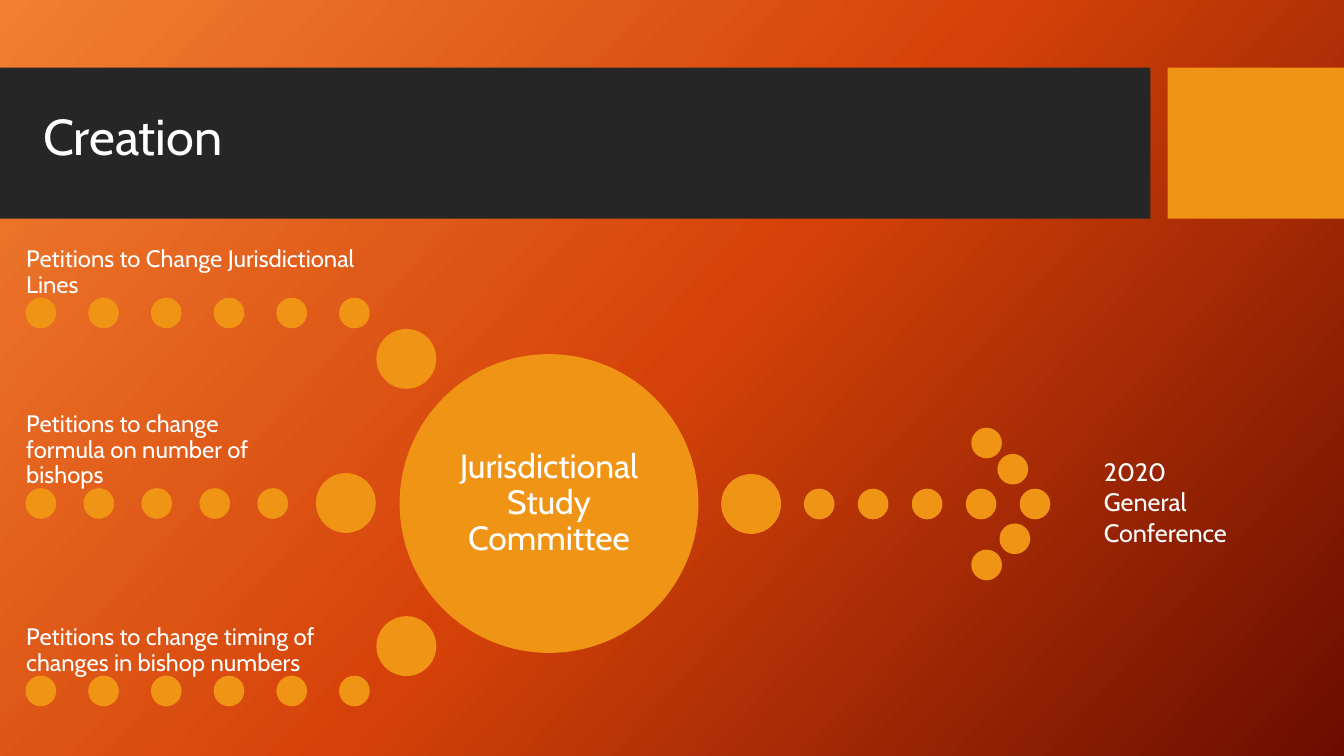
from copy import deepcopy
from pptx import Presentation
from pptx.dml.color import RGBColor
from pptx.enum.shapes import MSO_SHAPE as Preset
from pptx.enum.text import MSO_ANCHOR as Anchor, PP_ALIGN as Align
from pptx.oxml.ns import qn
from pptx.util import Pt

UNIT = 9144
FONT = "Cabin"
COLORS = {
    "glow": "F18031",
    "ember": "D54209",
    "deep": "6A0D00",
    "band": "262626",
    "accent": "F09415",
    "text": "FFFFFF",
}
DOT = 29
BIG_DOT = 58
LABEL_HEIGHT = 75


def px(*lengths):
    return [round(length * UNIT) for length in lengths]


def color(name):
    return RGBColor.from_string(COLORS[name])


def add_block(page, preset, box, fill, outlined=False):
    shape = page.shapes.add_shape(preset, *px(*box))
    shape.shadow.inherit = False
    shape.fill.solid()
    shape.fill.fore_color.rgb = color(fill)
    if outlined:
        shape.line.color.rgb = color(fill)
        shape.line.width = Pt(1)
    else:
        shape.line.fill.background()
    return shape


def add_text(page, box, text, size, anchor=Anchor.TOP, align=Align.LEFT,
             spacing=0.9, insets=(10, 5)):
    frame = page.shapes.add_textbox(*px(*box)).text_frame
    frame.word_wrap = True
    frame.vertical_anchor = anchor
    side, edge = px(*insets)
    frame.margin_left = frame.margin_right = side
    frame.margin_top = frame.margin_bottom = edge
    para = frame.paragraphs[0]
    para.alignment = align
    para.line_spacing = spacing
    span = para.add_run()
    span.text = text
    span.font.name = FONT
    span.font.size = Pt(size)
    span.font.color.rgb = color("text")


def add_dot(page, left, top, size=DOT):
    add_block(page, Preset.OVAL, (left, top, size, size), "accent", outlined=True)


def add_dot_row(page, left, top, count, reach):
    step = (reach - DOT) / (count - 1)
    for index in range(count):
        add_dot(page, left + index * step, top)


def paint_background(page):
    fill = page.background.fill
    fill.gradient()
    fill.gradient_angle = 318
    stop_list = page.element.find(".//" + qn("a:gsLst"))
    stop_list.append(deepcopy(stop_list[-1]))
    stops = zip(fill.gradient_stops, (0, 0.5, 1), ("glow", "ember", "deep"))
    for stop, position, name in stops:
        stop.position = position
        stop.color.rgb = color(name)


def add_header(page, box, title):
    left, top, width, height = box
    tab, gap = 175, 17
    band = width - tab - gap
    add_block(page, Preset.RECTANGLE, (left, top, band, height), "band")
    add_block(page, Preset.RECTANGLE, (left + width - tab, top, tab, height), "accent")
    add_text(page, (left + 33, top + 12, band - 90, 118), title, 36, Anchor.MIDDLE)


def add_petition(page, box, text, count, reach, big_left, big_top):
    left, top, width, height = box
    add_text(page, box, text, 17, Anchor.BOTTOM, insets=(0, 0))
    add_dot_row(page, left, top + height, count, reach)
    add_dot(page, left + big_left, top + height + big_top, BIG_DOT)


def add_committee(page, box, text):
    left, top, size, _ = box
    add_dot(page, left, top, size)
    inset = 43
    inner = size - 2 * inset
    add_text(page, (left + inset, top + inset, inner, inner), text, 24,
             Anchor.MIDDLE, Align.CENTER, insets=(3, 3))


def add_dotted_arrow(page, box):
    left, top, width, height = box
    middle = top + (height - DOT) / 2
    add_dot(page, left, top + (height - BIG_DOT) / 2, BIG_DOT)
    add_dot_row(page, left + 82, middle, 5, width - 82)
    for across, down in ((248, 0), (274, 26), (276, 95), (248, 121)):
        add_dot(page, left + across, top + down)


def main():
    deck = Presentation()
    deck.slide_width, deck.slide_height = px(1333, 750)
    page = deck.slides.add_slide(deck.slide_layouts[6])
    paint_background(page)
    add_header(page, (0, 67, 1333, 150), "Creation")
    add_dotted_arrow(page, (716, 425, 325, 150))
    add_committee(page, (397, 352, 295, 295), "Jurisdictional Study Committee")
    petitions = (
        ("Petitions to Change Jurisdictional Lines", 221, 342, 6, 340, 348, 31),
        ("Petitions to change formula on number of bishops", 410, 258, 5, 259, 288, -15),
        ("Petitions to change timing of changes in bishop numbers", 596, 342, 6, 340, 348, -59),
    )
    for text, top, width, count, reach, big_left, big_top in petitions:
        add_petition(page, (26, top, width, LABEL_HEIGHT), text, count, reach,
                     big_left, big_top)
    add_text(page, (1085, 448, 168, 101), "2020 General Conference", 18, spacing=1.0)
    deck.save("out.pptx")


if __name__ == "__main__":
    main()
